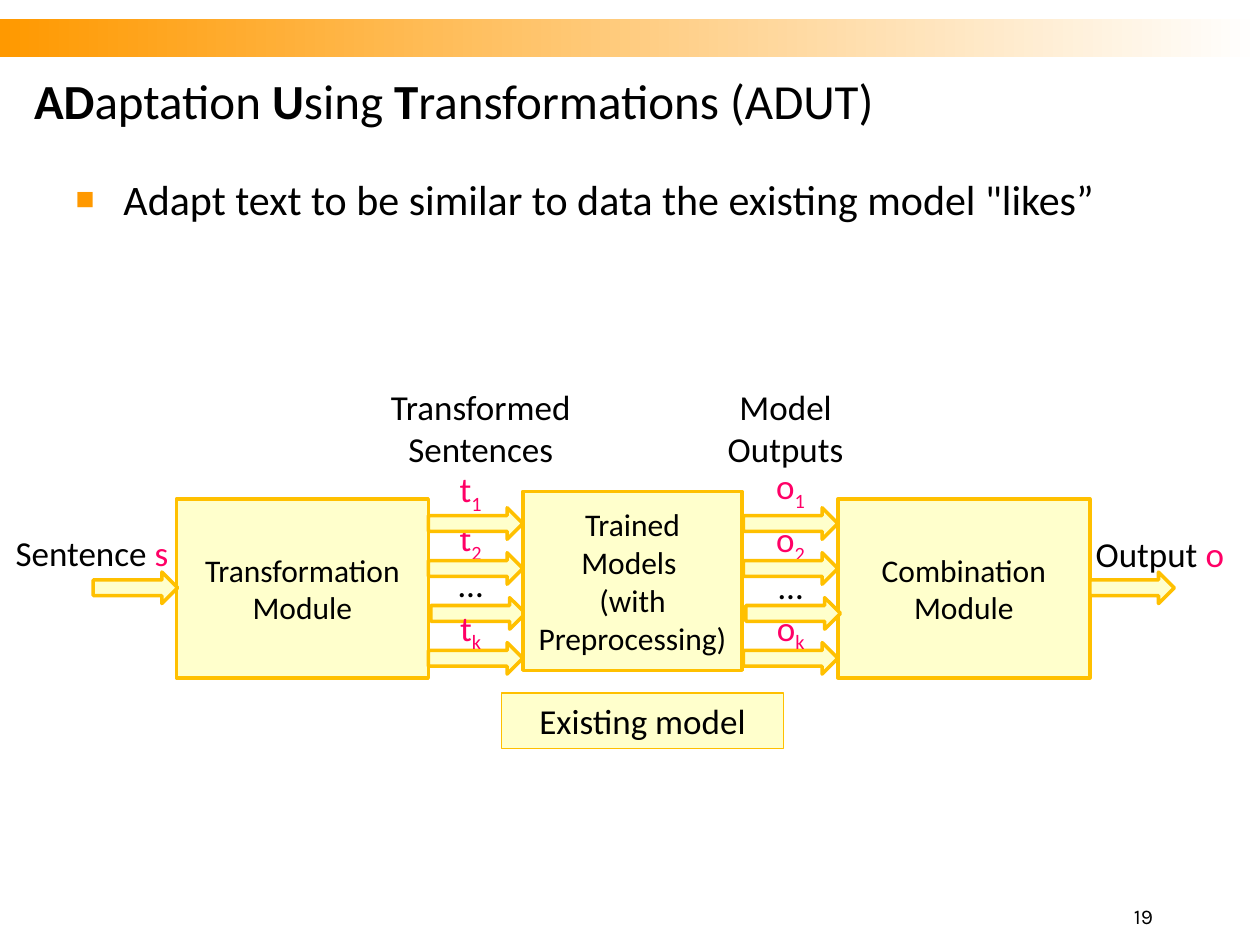
from lxml import etree
from pptx import Presentation
from pptx.dml.color import RGBColor
from pptx.enum.shapes import MSO_SHAPE
from pptx.enum.text import MSO_ANCHOR, MSO_AUTO_SIZE, PP_ALIGN
from pptx.oxml.ns import qn
from pptx.util import Inches, Pt

RECT, ARROW = MSO_SHAPE.RECTANGLE, MSO_SHAPE.RIGHT_ARROW
TOP, MIDDLE, BOTTOM = MSO_ANCHOR.TOP, MSO_ANCHOR.MIDDLE, MSO_ANCHOR.BOTTOM
LEFT, CENTER, RIGHT = PP_ALIGN.LEFT, PP_ALIGN.CENTER, PP_ALIGN.RIGHT
NO_FIT = MSO_AUTO_SIZE.NONE

COLORS = {"text": "000000", "mark": "FF0066", "fill": "FFFFCC",
          "edge": "FFC000", "accent": "FF9900", "paper": "FFFFFF"}


def rgb(name):
    return RGBColor.from_string(COLORS[name])


def write(frame, *paras, size=20, font="Calibri", align=CENTER, anchor=MIDDLE):
    """Each paragraph is a string or a list of (text, style) runs;
    a style holds any of the letters b (bold), m (marked), s (subscript)."""
    frame.word_wrap = True
    frame.auto_size = NO_FIT
    frame.vertical_anchor = anchor
    for i, runs in enumerate(paras):
        para = frame.paragraphs[0] if i == 0 else frame.add_paragraph()
        para.alignment = align
        para.space_before = Pt(0)
        for text, style in [(runs, "")] if isinstance(runs, str) else runs:
            run = para.add_run()
            run.text = text
            run.font.name, run.font.size = font, Pt(size)
            run.font.bold = "b" in style
            run.font.color.rgb = rgb("mark" if "m" in style else "text")
            if "s" in style:
                run.font._element.set("baseline", "-25000")


class Deck:
    def __init__(self):
        self.file = Presentation()
        self.file.slide_width, self.file.slide_height = Inches(10), Inches(7.5)
        self.slide = self.file.slides.add_slide(self.file.slide_layouts[1])

    def shape(self, kind, x, y, w, h, line=2):
        item = self.slide.shapes.add_shape(
            kind, Inches(x), Inches(y), Inches(w), Inches(h))
        item.shadow.inherit = False
        item.fill.solid()
        item.fill.fore_color.rgb = rgb("fill")
        item.line.color.rgb = rgb("edge")
        item.line.width = Pt(line)
        return item

    def band(self, x, y, w, h):
        item = self.shape(RECT, x, y, w, h)
        item.line.fill.background()
        item.fill.gradient()
        item.fill.gradient_angle = 0
        for stop, name in zip(item.fill.gradient_stops, ("accent", "paper")):
            stop.color.rgb = rgb(name)

    def box(self, x, y, w, h, *paras, line=2, **form):
        write(self.shape(RECT, x, y, w, h, line).text_frame, *paras, **form)

    def arrow(self, x, y, w=0.75):
        self.shape(ARROW, x, y, w, 0.25)

    def label(self, x, y, w, h, *paras, **form):
        item = self.slide.shapes.add_textbox(
            Inches(x), Inches(y), Inches(w), Inches(h))
        write(item.text_frame, *paras, **form)

    def holder(self, index, x, y, w, h, *paras, **form):
        item = self.slide.placeholders[index]
        item.left, item.top = Inches(x), Inches(y)
        item.width, item.height = Inches(w), Inches(h)
        write(item.text_frame, *paras, align=LEFT, **form)
        return item

    def bullet(self, para):
        props = para._p.get_or_add_pPr()
        props.set("marL", str(Inches(0.38)))
        props.set("indent", str(-Inches(0.38)))
        color = etree.SubElement(props, qn("a:buClr"))
        etree.SubElement(color, qn("a:srgbClr"), val=COLORS["accent"])
        etree.SubElement(props, qn("a:buSzPct"), val="75000")
        etree.SubElement(props, qn("a:buFont"), typeface="Arial")
        etree.SubElement(props, qn("a:buChar"), char="■")


def main():
    deck = Deck()

    # Top band, title, bullet and page number
    deck.band(0, 0.15, 10, 0.3)
    deck.holder(0, 0.17, 0.5, 9, 0.58,
                [("AD", "b"), ("aptation ", ""), ("U", "b"), ("sing ", ""),
                 ("T", "b"), ("ransformations (ADUT)", "")], size=28)
    body = deck.holder(
        1, 0.5, 1.33, 9, 1.06,
        'Adapt text to be similar to data the existing model "likes”',
        size=24, anchor=TOP)
    deck.bullet(body.text_frame.paragraphs[0])
    deck.label(8.25, 7.17, 1, 0.25, "19", size=12, font="Karla",
               align=RIGHT, anchor=BOTTOM)

    # Two flows: letter, label left, arrow left, label tops
    flows = [("t", 3.11, 3.4, (3.68, 4.07, 4.41, 4.78)),
             ("o", 5.65, 5.9, (3.66, 4.08, 4.43, 4.78))]
    signs = ("1", "2", None, "k")

    def tags(rows):
        for letter, x, _, tops in flows:
            for row in rows:
                sign = signs[row]
                runs = [(letter, "m"), (sign, "ms")] if sign else "…"
                deck.label(x, tops[row], 1.25, 0.44, runs)

    # The middle tags lie behind the arrows, the outer ones in front
    tags((1, 2))
    deck.box(1.4, 3.96, 2, 1.42, "Transformation Module", size=18)
    deck.box(6.65, 3.96, 2, 1.42, "Combination Module", size=18)
    for _, _, x, _ in flows:
        for row, sign in enumerate(signs):
            deck.arrow(x if sign else x + 0.02, 4.03 + row * 1.07 / 3)
    tags((0, 3))
    deck.box(4.15, 3.9, 1.74, 1.42, "Trained Models ", "(with Preprocessing)",
             size=18)

    # Input and output
    for x in (0.74, 8.65):
        deck.arrow(x, 4.54, 0.67)
    deck.label(-0.09, 4.17, 1.64, 0.44, [("Sentence ", ""), ("s", "m")],
               anchor=TOP)
    deck.label(8.58, 4.18, 1.25, 0.44, [("Output ", ""), ("o", "m")],
               anchor=TOP)

    # Captions
    deck.label(2.77, 3.01, 2.09, 0.77, "Transformed Sentences", anchor=TOP)
    deck.label(5.61, 3.01, 1.25, 0.77, "Model Outputs", anchor=TOP)
    deck.box(3.98, 5.5, 2.24, 0.44, "Existing model", line=0.75, anchor=TOP)

    deck.file.save("out.pptx")


if __name__ == "__main__":
    main()
